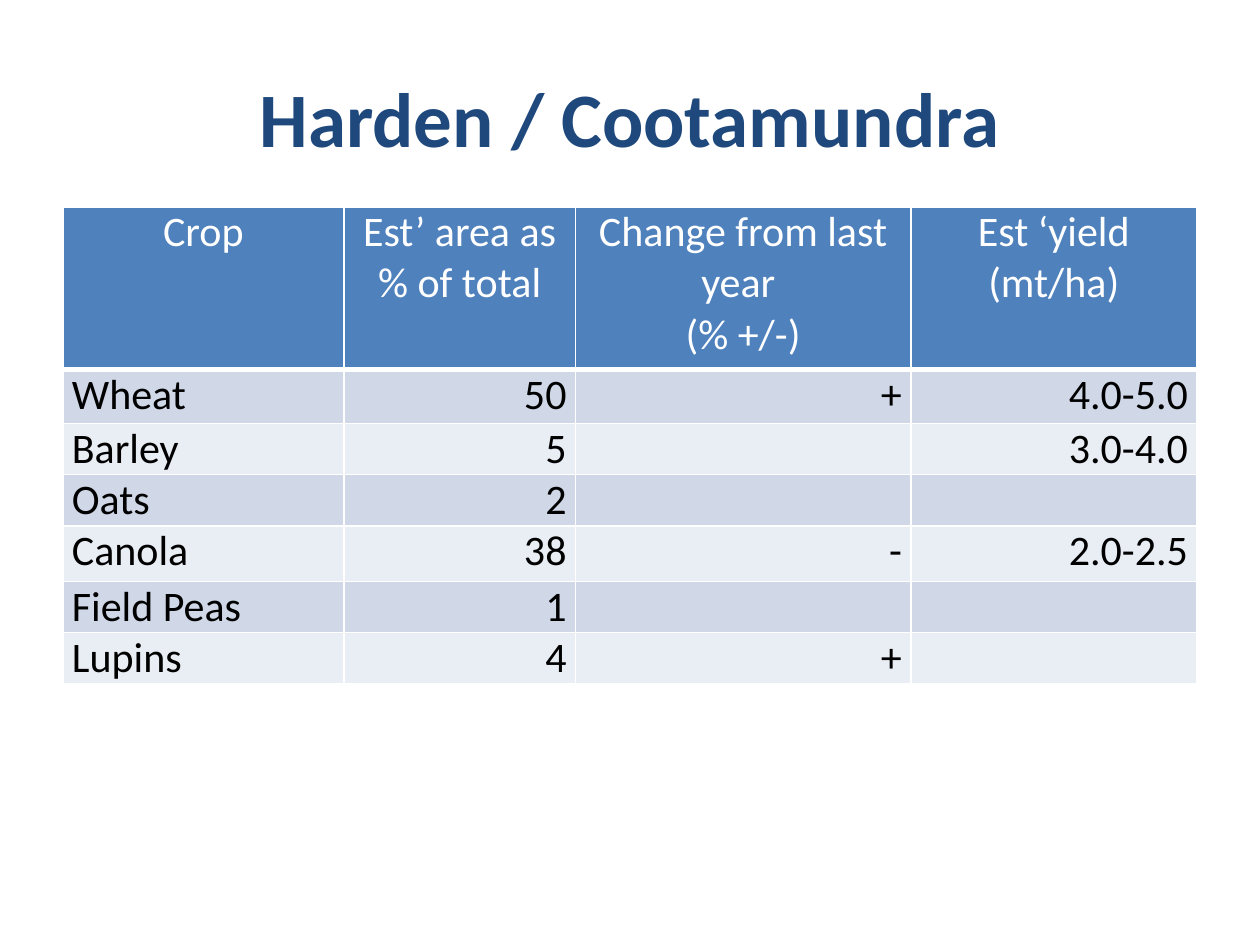
from lxml import etree
from pptx import Presentation
from pptx.dml.color import RGBColor
from pptx.enum.text import MSO_ANCHOR, PP_ALIGN
from pptx.oxml.ns import qn
from pptx.util import Cm, Pt

LEFT, CENTER, RIGHT = PP_ALIGN.LEFT, PP_ALIGN.CENTER, PP_ALIGN.RIGHT
MIDDLE = MSO_ANCHOR.MIDDLE
NAVY = RGBColor(0x1F, 0x49, 0x7D)
BLUE = RGBColor(0x4F, 0x81, 0xBD)
BAND_DARK = RGBColor(0xD0, 0xD8, 0xE8)
BAND_LIGHT = RGBColor(0xE9, 0xED, 0xF4)
WHITE = RGBColor(0xFF, 0xFF, 0xFF)
BLACK = RGBColor(0, 0, 0)

COLUMN_WIDTHS = [5.66, 4.67, 6.76, 5.77]
ROW_HEIGHTS = [3.28, 1.09, 1.03, 1.03, 1.12, 1.03, 1.03]
CROPS = [
    ["Crop", "Est’ area as % of total", "Change from last year \n(% +/-)", "Est ‘yield\n(mt/ha)"],
    ["Wheat", "50", "+", "4.0-5.0"],
    ["Barley", "5", "", "3.0-4.0"],
    ["Oats", "2", "", ""],
    ["Canola", "38", "-", "2.0-2.5"],
    ["Field Peas", "1", "", ""],
    ["Lupins", "4", "+", ""],
]


def style_paragraph(para, size, color, align, bold=False):
    """Set the alignment and font of one paragraph."""
    para.alignment = align
    font = para.font
    font.name, font.size, font.bold = "Calibri", Pt(size), bold
    font.color.rgb = color


def add_title(page, left, top, width, height):
    """Place the centred slide title."""
    box = page.shapes.add_textbox(Cm(left), Cm(top), Cm(width), Cm(height))
    frame = box.text_frame
    frame.word_wrap = True
    frame.vertical_anchor = MIDDLE
    frame.text = "Harden / Cootamundra"
    style_paragraph(frame.paragraphs[0], 44, NAVY, CENTER, bold=True)


def add_borders(cell, widths):
    """Draw white borders, with widths in points for each side."""
    properties = cell._tc.get_or_add_tcPr()
    for side, width in widths.items():
        line = etree.SubElement(properties, qn(f"a:ln{side}"), w=str(Pt(width)))
        fill = etree.SubElement(line, qn("a:solidFill"))
        etree.SubElement(fill, qn("a:srgbClr"), val=str(WHITE))


def fill_cell(cell, text, row, column):
    """Write and style one cell according to its place in the table."""
    header = row == 0
    cell.margin_left = cell.margin_right = Cm(0.18)
    cell.margin_top = cell.margin_bottom = 0
    add_borders(cell, {"L": 1, "R": 1, "T": 3 if row == 1 else 1, "B": 3 if header else 1})
    cell.fill.solid()
    cell.fill.fore_color.rgb = BLUE if header else BAND_DARK if row % 2 else BAND_LIGHT
    cell.text = text
    align = CENTER if header else RIGHT if column else LEFT
    for para in cell.text_frame.paragraphs:
        style_paragraph(para, 24, WHITE if header else BLACK, align)


def add_crop_table(page, left, top):
    """Place the table of crop estimates."""
    frame = page.shapes.add_table(
        len(CROPS), len(COLUMN_WIDTHS), Cm(left), Cm(top),
        Cm(sum(COLUMN_WIDTHS)), Cm(sum(ROW_HEIGHTS)))
    table = frame.table
    table.first_row = table.horz_banding = False
    for column, width in zip(table.columns, COLUMN_WIDTHS):
        column.width = Cm(width)
    for row, height in zip(table.rows, ROW_HEIGHTS):
        row.height = Cm(height)
    for row, values in enumerate(CROPS):
        for column, text in enumerate(values):
            fill_cell(table.cell(row, column), text, row, column)


def main():
    """Build the slide and save it."""
    deck = Presentation()
    deck.slide_width, deck.slide_height = Cm(25.4), Cm(19.05)
    page = deck.slides.add_slide(deck.slide_layouts[6])
    add_title(page, 1.27, 0.76, 22.86, 3.18)
    add_crop_table(page, 1.27, 4.17)
    deck.save("out.pptx")


if __name__ == "__main__":
    main()
